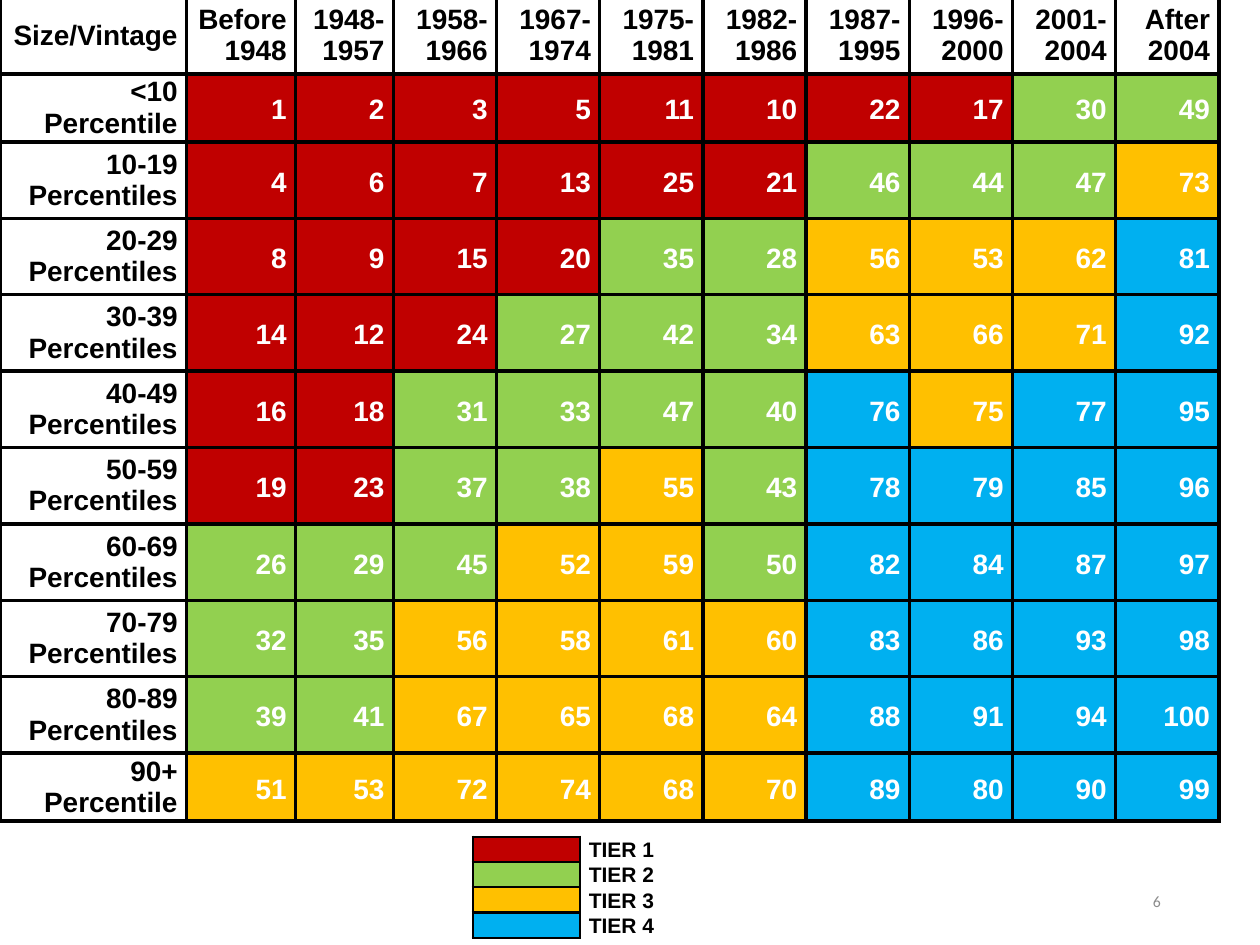
"""Build a slide ranking size and vintage groups in four coloured tiers."""
from lxml import etree
from pptx import Presentation
from pptx import util as u
from pptx.dml.color import RGBColor
from pptx.enum import text
from pptx.oxml import ns

COLORS = {
    "ink": "000000", "light": "FFFFFF", "number": "8C8C8C",
    "TIER 1": "C00000", "TIER 2": "92D050", "TIER 3": "FFC000", "TIER 4": "00B0F0",
}
TIERS = ["TIER 1", "TIER 2", "TIER 3", "TIER 4"]
VINTAGES = ["Before 1948", "1948-1957", "1958-1966", "1967-1974", "1975-1981",
            "1982-1986", "1987-1995", "1996-2000", "2001-2004", "After 2004"]
RANKS = {
    "<10 Percentile": [1, 2, 3, 5, 11, 10, 22, 17, 30, 49],
    "10-19 Percentiles": [4, 6, 7, 13, 25, 21, 46, 44, 47, 73],
    "20-29 Percentiles": [8, 9, 15, 20, 35, 28, 56, 53, 62, 81],
    "30-39 Percentiles": [14, 12, 24, 27, 42, 34, 63, 66, 71, 92],
    "40-49 Percentiles": [16, 18, 31, 33, 47, 40, 76, 75, 77, 95],
    "50-59 Percentiles": [19, 23, 37, 38, 55, 43, 78, 79, 85, 96],
    "60-69 Percentiles": [26, 29, 45, 52, 59, 50, 82, 84, 87, 97],
    "70-79 Percentiles": [32, 35, 56, 58, 61, 60, 83, 86, 93, 98],
    "80-89 Percentiles": [39, 41, 67, 65, 68, 64, 88, 91, 94, 100],
    "90+ Percentile": [51, 53, 72, 74, 68, 70, 89, 80, 90, 99],
}


def make_table(s, left, top, widths, heights):
    """Add a plain table with the given column widths and row heights in cm."""
    frame = s.shapes.add_table(len(heights), len(widths), u.Cm(left), u.Cm(top),
                               u.Cm(sum(widths)), u.Cm(sum(heights)))
    tbl = frame.table
    tbl.first_row = tbl.horz_banding = False
    for col, width in zip(tbl.columns, widths):
        col.width = u.Cm(width)
    for row, height in zip(tbl.rows, heights):
        row.height = u.Cm(height)
    return tbl


def style_cell(cell, label, size, color="ink", fill=None, border=2.25, sides="LRTB"):
    """Write a cell's text and set its borders, fill and font; return its paragraph."""
    cell.margin_left = cell.margin_right = u.Cm(0.18)
    cell.margin_top = cell.margin_bottom = 0
    cell.vertical_anchor = text.MSO_ANCHOR.MIDDLE
    tcPr = cell._tc.get_or_add_tcPr()
    for side in "LRTB":
        ln = etree.SubElement(tcPr, ns.qn(f"a:ln{side}"), w=str(u.Pt(border)))
        if side in sides:
            solid = etree.SubElement(ln, ns.qn("a:solidFill"))
            etree.SubElement(solid, ns.qn("a:srgbClr"), val=COLORS["ink"])
        else:
            etree.SubElement(ln, ns.qn("a:noFill"))
    if fill:
        cell.fill.solid()
        cell.fill.fore_color.rgb = RGBColor.from_string(COLORS[fill])
    else:
        cell.fill.background()
    p = cell.text_frame.paragraphs[0]
    if label:
        p.text = label
    p.font.name, p.font.size, p.font.bold = "Arial", u.Pt(size), True
    p.font.color.rgb = RGBColor.from_string(COLORS[color])
    return p


prs = Presentation()
prs.slide_width, prs.slide_height = u.Cm(25.4), u.Cm(19.05)
s = prs.slides.add_slide(prs.slide_layouts[6])

tb = s.shapes.add_textbox(u.Cm(17.93), u.Cm(17.65), u.Cm(5.72), u.Cm(1.02))
tf = tb.text_frame
tf.word_wrap = True
tf.vertical_anchor = text.MSO_ANCHOR.MIDDLE
p = tf.paragraphs[0]
p.text = "6"
p.alignment = text.PP_ALIGN.RIGHT
p.font.name, p.font.size = "Calibri", u.Pt(9)
p.font.color.rgb = RGBColor.from_string(COLORS["number"])

ranking = make_table(s, 0, -0.05, [3.76, 2.2, 1.97] + [2.08] * 8,
                     [1.54, 1.37] + [1.54] * 8 + [1.37])
for c, label in enumerate(["Size/Vintage"] + VINTAGES):
    style_cell(ranking.cell(0, c), label, 16).alignment = text.PP_ALIGN.RIGHT
for r, (group, ranks) in enumerate(RANKS.items(), 1):
    style_cell(ranking.cell(r, 0), group, 16).alignment = text.PP_ALIGN.RIGHT
    for c, rank in enumerate(ranks, 1):
        tier = TIERS[(rank - 1) // 25]
        p = style_cell(ranking.cell(r, c), str(rank), 16, "light", tier)
        p.alignment = text.PP_ALIGN.RIGHT
        p.line_spacing = 1.15
        p.space_after = u.Pt(10)

legend = make_table(s, 9.53, 16.87, [2.16, 1.85], [0.48] * 4)
for r, tier in enumerate(TIERS):
    style_cell(legend.cell(r, 0), "", 12, fill=tier, border=1.5)
    style_cell(legend.cell(r, 1), tier, 12, border=1.5, sides="L")
    legend.cell(r, 1).vertical_anchor = text.MSO_ANCHOR.BOTTOM

prs.save("out.pptx")
